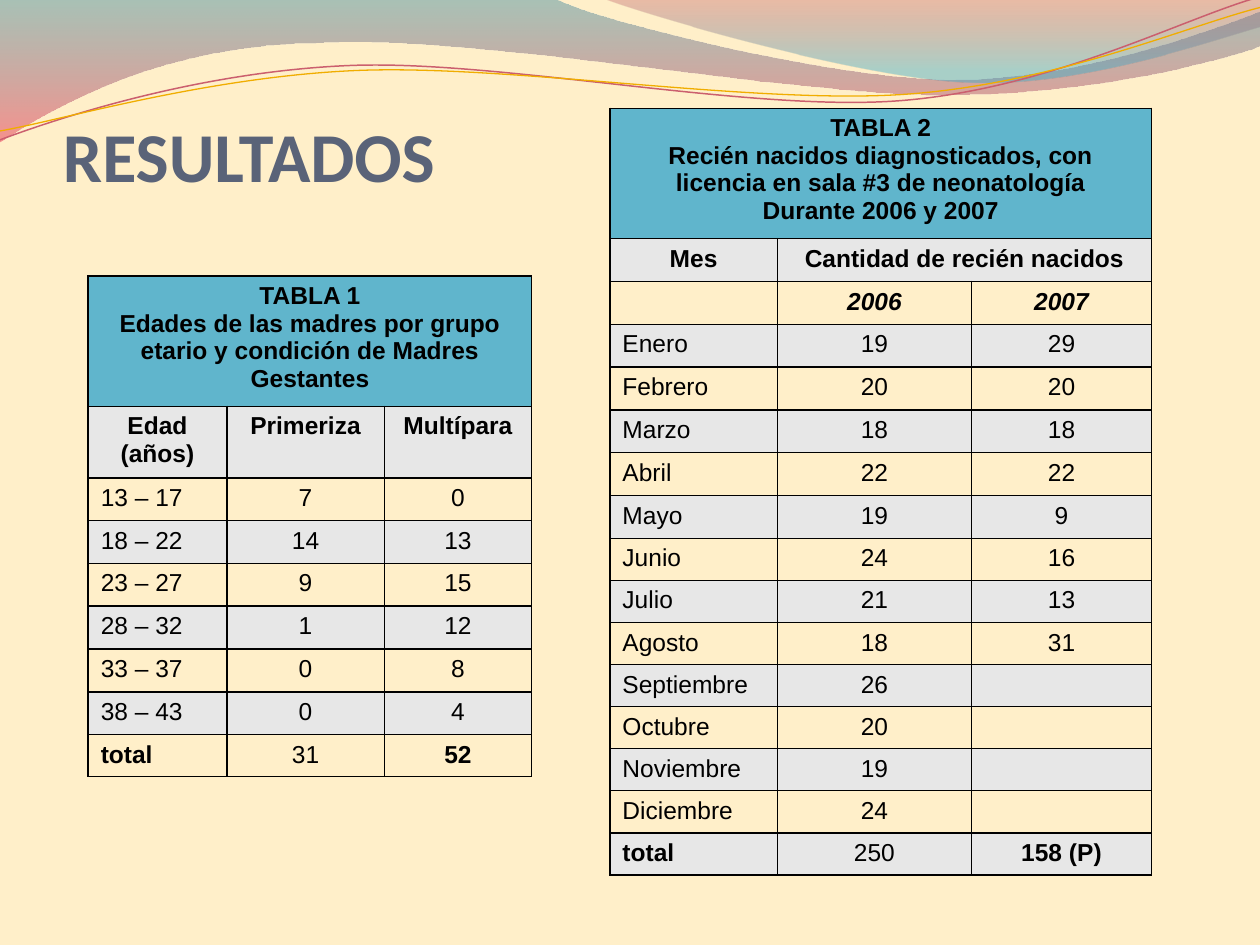
import math

import pptx
import pptx.dml.color
import pptx.enum.text
import pptx.oxml.ns
import pptx.util
from lxml import etree

RGBColor = pptx.dml.color.RGBColor
Inches, Pt = pptx.util.Inches, pptx.util.Pt
ALIGN, ANCHOR = pptx.enum.text.PP_ALIGN, pptx.enum.text.MSO_ANCHOR
qn = pptx.oxml.ns.qn

CREAM = RGBColor(0xFF, 0xEF, 0xC9)
GREY = RGBColor(0xE7, 0xE7, 0xE7)
BLUE = RGBColor(0x60, 0xB5, 0xCC)
SLATE = RGBColor(0x5A, 0x63, 0x78)
BLACK = RGBColor(0, 0, 0)
TEAL = RGBColor(0x3F, 0x8A, 0x9F)
CORAL = RGBColor(0xEF, 0x44, 0x5B)
BRICK = RGBColor(0xB8, 0x42, 0x53)
AQUA = RGBColor(0x42, 0xAB, 0xC7)
ROSE = RGBColor(0xCB, 0x5F, 0x6E)
AMBER = RGBColor(0xF0, 0xAD, 0x00)

# Each wave is a start point followed by segments: 2 numbers draw a line, 6 a Bézier curve.
LEFT_WAVE = [(0, -0.01), (4.4, -0.01), (4.76, 0.17, 6.64, 0.63, 7.58, 0.63),
             (8.53, 0.63, 9.58, 0.26, 10, 0.09), (10.01, 0.36),
             (9.83, 0.44, 8.7, 0.76, 7.46, 0.75), (6.22, 0.75, 3.82, 0.28, 2.57, 0.34),
             (1.29, 0.35, 0.46, 0.83, -0.01, 1.13), (0, -0.01)]
RIGHT_WAVE = [(4.79, -0.01), (5.09, 0.11, 6.82, 0.62, 7.69, 0.65),
              (8.56, 0.69, 9.61, 0.32, 10, 0.21), (10, 0), (4.79, -0.01)]
ROSE_LINE = [(0, 1.11), (0.48, 0.93, 1.58, 0.57, 2.77, 0.52),
             (3.95, 0.47, 5.93, 0.89, 7.13, 0.8), (8.33, 0.71, 9.38, 0.15, 9.98, -0.02)]
AMBER_LINE = [(0, 1.04), (0.47, 0.96, 1.64, 0.61, 2.83, 0.56),
              (4.03, 0.51, 5.97, 0.83, 7.17, 0.75), (8.36, 0.67, 9.41, 0.21, 10, 0.06)]

MOTHERS = [
    ["TABLA 1\nEdades de las madres por grupo etario y condición de Madres Gestantes", "", ""],
    ["Edad (años)", "Primeriza", "Multípara"],
    ["13 – 17", "7", "0"], ["18 – 22", "14", "13"], ["23 – 27", "9", "15"],
    ["28 – 32", "1", "12"], ["33 – 37", "0", "8"], ["38 – 43", "0", "4"],
    ["total", "31", "52"],
]
NEWBORNS = [
    ["TABLA 2\nRecién nacidos diagnosticados, con licencia en sala #3 de neonatología\n"
     "Durante 2006 y 2007", "", ""],
    ["Mes", "Cantidad de recién nacidos", ""],
    ["", "2006", "2007"],
    ["Enero", "19", "29"], ["Febrero", "20", "20"], ["Marzo", "18", "18"],
    ["Abril", "22", "22"], ["Mayo", "19", "9"], ["Junio", "24", "16"],
    ["Julio", "21", "13"], ["Agosto", "18", "31"], ["Septiembre", "26", ""],
    ["Octubre", "20", ""], ["Noviembre", "19", ""], ["Diciembre", "24", ""],
    ["total", "250", "158 (P)"],
]


def write(tf, text, font="Arial", size=14, color=BLACK, bold=False, italic=False,
          align=ALIGN.LEFT):
    """Fill a text frame, one paragraph per line of text."""
    for i, line in enumerate(text.split("\n")):
        p = tf.add_paragraph() if i else tf.paragraphs[0]
        p.alignment = align
        if line:
            r = p.add_run()
            r.text = line
            r.font.name, r.font.size = font, Pt(size)
            r.font.bold, r.font.italic = bold, italic
            r.font.color.rgb = color
        end = etree.SubElement(p._p, qn("a:endParaRPr"), sz=str(size * 100))
        etree.SubElement(end, qn("a:latin"), typeface=font)


def turn(segments, center, degrees):
    """Rotate every point of a list of segments about a center."""
    cx, cy = center
    c, s = math.cos(math.radians(degrees)), math.sin(math.radians(degrees))
    return [[v for x, y in zip(seg[0::2], seg[1::2])
             for v in (cx + (x - cx) * c - (y - cy) * s, cy + (x - cx) * s + (y - cy) * c)]
            for seg in segments]


class Deck:
    def __init__(self):
        self.prs = pptx.Presentation()
        self.prs.slide_width, self.prs.slide_height = Inches(10), Inches(7.5)
        self.s = self.prs.slides.add_slide(self.prs.slide_layouts[6])
        self.s.background.fill.solid()
        self.s.background.fill.fore_color.rgb = CREAM

    def outline(self, segments, close):
        """Build a freeform, then join each triple of points into a Bézier curve."""
        points = [(Inches(x), Inches(y)) for seg in segments
                  for x, y in zip(seg[0::2], seg[1::2])]
        fb = self.s.shapes.build_freeform(*points[0])
        fb.add_line_segments(points[1:], close=close)
        sp = fb.convert_to_shape()
        sp.shadow.inherit = False
        lines = iter(list(sp._element.iter(qn("a:lnTo"))))
        for seg in segments[1:]:
            line = next(lines)
            if len(seg) == 6:
                line.addprevious(curve := etree.Element(qn("a:cubicBezTo")))
                for part in (line, next(lines), next(lines)):
                    curve.append(part[0])
                    part.getparent().remove(part)
        return sp

    def wave(self, segments, stops):
        """Draw a filled wave; stops are (position, colour, opacity in percent)."""
        sp = self.outline(segments, True)
        sp.line.fill.background()
        sp.fill.gradient()
        sp.fill.gradient_angle = 270
        for stop, (position, color, _) in zip(sp.fill.gradient_stops, stops):
            stop.position = position
            stop.color.rgb = color
        for clr, (_, _, opacity) in zip(sp._element.spPr.iter(qn("a:srgbClr")), stops):
            etree.SubElement(clr, qn("a:alpha"), val=str(opacity * 1000))

    def ribbon(self, segments, center, color, width, tilt=-2.7):
        sp = self.outline(turn(segments, center, -tilt), False)
        sp.rotation = tilt
        sp.fill.background()
        sp.line.color.rgb, sp.line.width = color, Pt(width)

    def title(self, text, x, y, w, h):
        tf = self.s.shapes.add_textbox(Inches(x), Inches(y), Inches(w), Inches(h)).text_frame
        tf.word_wrap, tf.vertical_anchor = True, ANCHOR.BOTTOM
        tf.margin_left = tf.margin_right = tf.margin_bottom = 0
        write(tf, text, font="Calibri", size=40, color=SLATE, bold=True)

    def border(self, cell):
        tcPr = cell._tc.get_or_add_tcPr()
        for i, side in enumerate(("lnL", "lnR", "lnT", "lnB")):
            ln = etree.Element(qn("a:" + side), w=str(Pt(1)))
            fill = etree.SubElement(ln, qn("a:solidFill"))
            etree.SubElement(fill, qn("a:srgbClr"), val=str(BLACK))
            tcPr.insert(i, ln)

    def table(self, rows, x, y, widths, height, heads, merges):
        """Add a banded table whose rows grow with their text; merges pairs cell corners."""
        frame = self.s.shapes.add_table(len(rows), len(widths), Inches(x), Inches(y),
                                        Inches(sum(widths)), Inches(height))
        table = frame.table
        for col, w in zip(table.columns, widths):
            col.width = Inches(w)
        for i, row in enumerate(rows):
            table.rows[i].height = Inches(0.6 if i == 0 else 0.34 if i < 8 else 0)
            for j, text in enumerate(row):
                cell = table.cell(i, j)
                cell.fill.solid()
                cell.fill.fore_color.rgb = BLUE if i == 0 else GREY if i % 2 else CREAM
                self.border(cell)
                total = i == len(rows) - 1 and j != 1
                write(cell.text_frame, text, bold=i < heads or total, italic=i == 2 and heads > 2,
                      align=ALIGN.CENTER if i < heads or j else ALIGN.LEFT)
        for start, end in merges:
            table.cell(*start).merge(table.cell(*end))
        frame.height = Inches(height)


def main():
    deck = Deck()
    deck.wave(LEFT_WAVE, [(0, TEAL, 45), (1, CORAL, 55)])
    deck.wave(RIGHT_WAVE, [(0, BRICK, 30), (0.8, AQUA, 45)])
    deck.ribbon(ROSE_LINE, (4.99, 0.58), ROSE, 0.85)
    deck.ribbon(AMBER_LINE, (5, 0.59), AMBER, 0.75)
    deck.title("RESULTADOS", 0.5, 0.77, 9, 0.79)
    deck.table(MOTHERS, 0.7, 2.19, [1.1, 1.25, 1.17], 4, 2, [((0, 0), (0, 2))])
    deck.table(NEWBORNS, 4.84, 0.86, [1.33, 1.54, 1.43], 6.11, 3,
               [((0, 0), (0, 2)), ((1, 1), (1, 2))])
    deck.prs.save("out.pptx")


if __name__ == "__main__":
    main()
